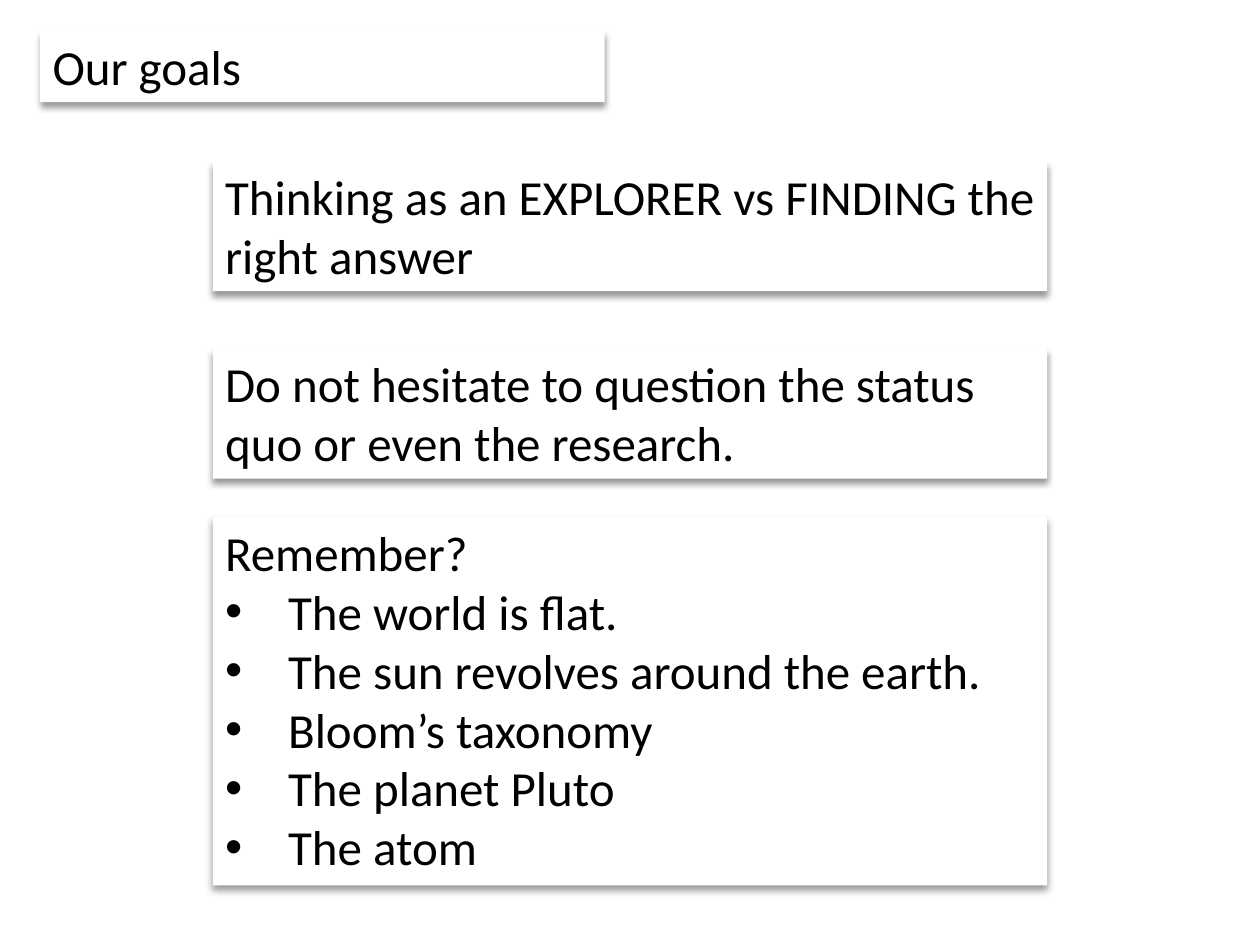
from lxml.etree import SubElement
from pptx import Presentation
from pptx.dml.color import RGBColor
from pptx.enum.text import MSO_AUTO_SIZE as AutoSize
from pptx.oxml.ns import qn
from pptx.util import Cm, Pt


def color(hex_string):
    return RGBColor.from_string(hex_string)


def write(paragraph, text, *, font, size, ink, bullet=False):
    """Fill a paragraph with formatted text, with a hanging bullet if asked."""
    if bullet:
        properties = paragraph._p.get_or_add_pPr()
        properties.set("marL", str(Cm(1.27)))
        properties.set("indent", str(-Cm(1.27)))
        SubElement(properties, qn("a:buFont"), typeface="Arial")
        SubElement(properties, qn("a:buChar"), char="•")
    run = paragraph.add_run()
    run.text = text
    run.font.name = font
    run.font.size = Pt(size)
    run.font.color.rgb = color(ink)


class GoalsSlide:
    font = "Calibri"
    size = 28
    ink = "000000"
    paper = "FFFFFF"

    def __init__(self, presentation):
        self.slide = presentation.slides.add_slide(presentation.slide_layouts[6])

    def card(self, left, top, width, height, heading, bullets=()):
        card = self.slide.shapes.add_textbox(Cm(left), Cm(top), Cm(width), Cm(height))
        card.fill.solid()
        card.fill.fore_color.rgb = color(self.paper)
        self.drop_shadow(card)
        frame = card.text_frame
        frame.word_wrap = True
        frame.auto_size = AutoSize.SHAPE_TO_FIT_TEXT
        style = dict(font=self.font, size=self.size, ink=self.ink)
        write(frame.paragraphs[0], heading, **style)
        for bullet in bullets:
            write(frame.add_paragraph(), bullet, bullet=True, **style)

    def drop_shadow(self, card):
        card.shadow.inherit = False
        effects = card._element.spPr.find(qn("a:effectLst"))
        shadow = SubElement(effects, qn("a:outerShdw"), blurRad=str(Pt(4)),
                            dist=str(Pt(3)), dir="5400000", algn="t", rotWithShape="0")
        tint = SubElement(shadow, qn("a:srgbClr"), val=self.ink)
        SubElement(tint, qn("a:alpha"), val="40000")


def main():
    presentation = Presentation()
    presentation.slide_width = Cm(25.4)
    presentation.slide_height = Cm(19.05)

    goals = GoalsSlide(presentation)
    goals.card(0.81, 0.61, 11.38, 1.45, "Our goals")

    goal_left, goal_width = 4.29, 16.82
    goals.card(goal_left, 3.23, goal_width, 2.64,
               "Thinking as an EXPLORER vs FINDING the right answer")
    goals.card(goal_left, 7.01, goal_width, 2.64,
               "Do not hesitate to question the status quo or even the research.")
    goals.card(goal_left, 10.41, goal_width, 7.44, "Remember?", [
        "The world is flat.",
        "The sun revolves around the earth.",
        "Bloom’s taxonomy",
        "The planet Pluto",
        "The atom",
    ])
    presentation.save("out.pptx")


if __name__ == "__main__":
    main()
